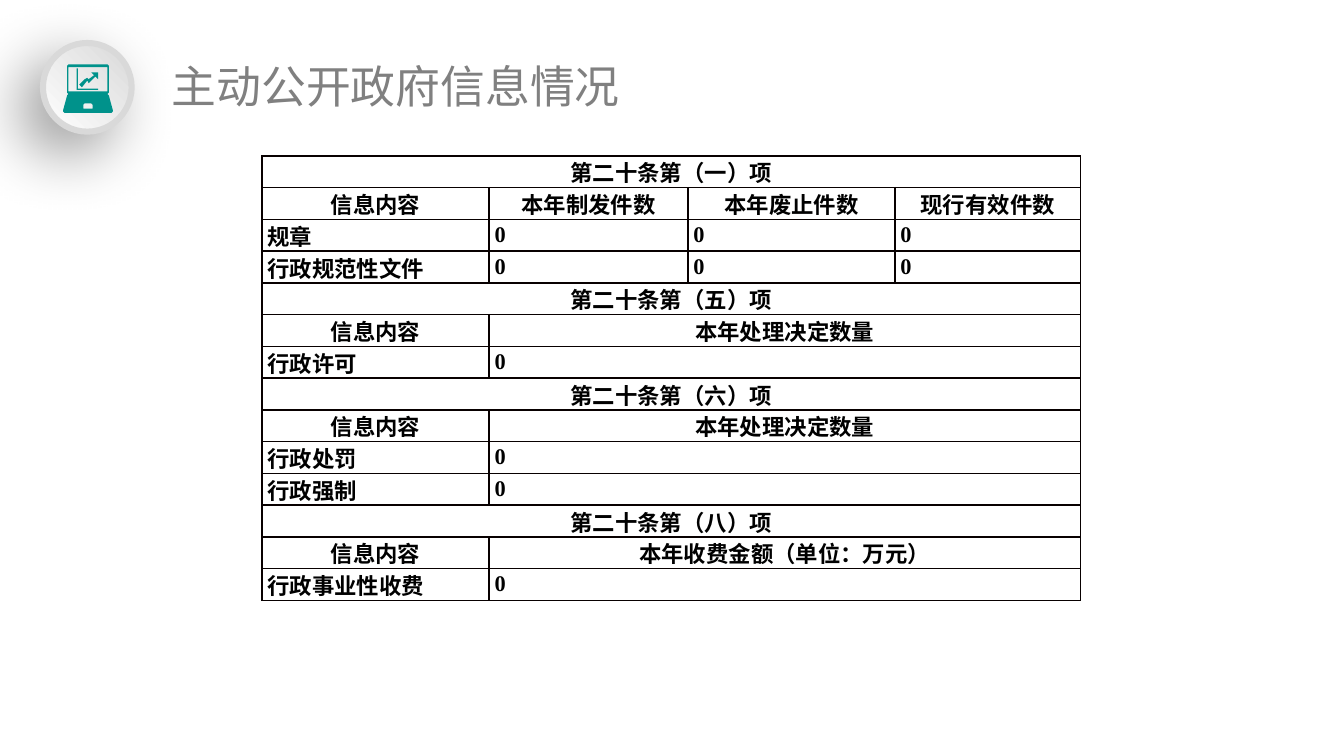
from lxml import etree
from pptx import Presentation
from pptx.dml.color import RGBColor
from pptx.enum import shapes, text
from pptx.oxml import ns
from pptx.util import Inches, Pt

WHITE = RGBColor(0xFF, 0xFF, 0xFF)
SILVER = RGBColor(0xD9, 0xD9, 0xD9)
GREY = RGBColor(0x80, 0x80, 0x80)
TEAL = RGBColor(0x00, 0x92, 0x8B)
BLACK = RGBColor(0, 0, 0)
BORDER = RGBColor(0x08, 0, 0)

COLUMNS = [1.69, 1.48, 1.54, 1.38]
TABLE_HEIGHT = 3.31
# One entry per section: title, column headings, data row labels
SECTIONS = [
    ("第二十条第（一）项", ["本年制发件数", "本年废止件数", "现行有效件数"],
     ["规章", "行政规范性文件"]),
    ("第二十条第（五）项", ["本年处理决定数量"], ["行政许可"]),
    ("第二十条第（六）项", ["本年处理决定数量"], ["行政处罚", "行政强制"]),
    ("第二十条第（八）项", ["本年收费金额（单位：万元）"], ["行政事业性收费"]),
]

# Laptop outline, then its cut-outs
LAPTOP = [
    [(0.51, 0.48), (0.8, 0.48), (0.81, 0.49), (0.81, 0.69), (0.8, 0.7),
     (0.81, 0.71), (0.84, 0.82), (0.84, 0.83), (0.83, 0.84), (0.48, 0.84),
     (0.47, 0.83), (0.47, 0.82), (0.5, 0.71), (0.51, 0.7), (0.5, 0.69),
     (0.5, 0.49)],
    [(0.51, 0.5), (0.51, 0.68), (0.8, 0.68), (0.8, 0.5)],
    [(0.63, 0.77), (0.62, 0.78), (0.62, 0.81), (0.69, 0.81), (0.69, 0.78),
     (0.68, 0.77)],
    [(0.73, 0.54), (0.73, 0.59), (0.71, 0.57), (0.66, 0.62), (0.65, 0.6),
     (0.61, 0.65), (0.59, 0.63), (0.63, 0.59), (0.65, 0.58), (0.66, 0.59),
     (0.7, 0.56), (0.68, 0.54)],
    [(0.57, 0.51), (0.57, 0.67), (0.73, 0.67), (0.73, 0.66),
     (0.58, 0.66), (0.58, 0.51)],
]


def set_all(target, values):
    for name, value in values.items():
        setattr(target, name, value)


def add_child(parent, tag, **attributes):
    return etree.SubElement(parent, ns.qn(tag), attributes)


def add_title(page, words):
    box = page.shapes.add_textbox(Inches(1.18), Inches(0.39),
                                  Inches(4.64), Inches(0.5))
    set_all(box.text_frame, {"word_wrap": True,
                             "auto_size": text.MSO_AUTO_SIZE.SHAPE_TO_FIT_TEXT})
    span = box.text_frame.paragraphs[0].add_run()
    span.text = words
    set_all(span.font, {"size": Pt(24), "name": "Arial"})
    span.font.color.rgb = GREY


def add_badge(page):
    badge = page.shapes.add_shape(shapes.MSO_SHAPE.OVAL, Inches(0.32),
                                  Inches(0.32), Inches(0.66), Inches(0.66))
    badge.fill.gradient()
    badge.fill.gradient_angle = 45
    for stop, colour, position in zip(badge.fill.gradient_stops,
                                      (WHITE, SILVER), (0, 1)):
        stop.color.rgb = colour
        stop.position = position
    badge.line.color.rgb = SILVER
    badge.line.width = Pt(3.25)

    # Soft shadow towards the lower left
    badge.shadow.inherit = False
    effects = badge._element.spPr.find(ns.qn("a:effectLst"))
    shadow = add_child(effects, "a:outerShdw", blurRad=str(Pt(35)),
                       dist=str(Pt(15)), dir=str(135 * 60000),
                       algn="ctr", rotWithShape="0")
    colour = add_child(shadow, "a:srgbClr", val=str(BLACK))
    add_child(colour, "a:alpha", val="40000")


def add_laptop(page):
    scale = Inches(1) / 1000
    builder = None
    for outline in LAPTOP:
        start, *rest = [(x * 1000, y * 1000) for x, y in outline]
        if builder is None:
            builder = page.shapes.build_freeform(*start, scale=scale)
        else:
            builder.move_to(*start)
        builder.add_line_segments(rest, close=True)
    laptop = builder.convert_to_shape()
    laptop.shadow.inherit = False
    laptop.fill.solid()
    laptop.fill.fore_color.rgb = TEAL
    laptop.line.fill.background()


def add_borders(cell):
    properties = cell._tc.get_or_add_tcPr()
    for side in ("a:lnL", "a:lnR", "a:lnT", "a:lnB"):
        line = add_child(properties, side, w=str(Pt(1)))
        add_child(add_child(line, "a:solidFill"), "a:srgbClr", val=str(BORDER))


def write_cell(cell, words, centred):
    set_all(cell, {"vertical_anchor": text.MSO_ANCHOR.MIDDLE,
                   "margin_left": Inches(0.04), "margin_right": Inches(0.04),
                   "margin_top": 0, "margin_bottom": 0})
    para = cell.text_frame.paragraphs[0]
    para.alignment = text.PP_ALIGN.CENTER if centred else text.PP_ALIGN.LEFT
    span = para.add_run()
    span.text = words
    set_all(span.font, {"size": Pt(12), "name": "Times New Roman", "bold": True})
    span.font.color.rgb = BLACK


def table_rows():
    """Yield the words of each row and whether they are centred."""
    for title, headings, labels in SECTIONS:
        yield [title], True
        yield ["信息内容", *headings], True
        for label in labels:
            yield [label] + ["0"] * len(headings), False


def add_disclosure_table(page):
    rows = list(table_rows())
    table = page.shapes.add_table(len(rows), len(COLUMNS), Inches(1.95),
                                  Inches(1.16), Inches(sum(COLUMNS)),
                                  Inches(TABLE_HEIGHT)).table
    set_all(table, {"first_row": False, "horz_banding": False})
    for column, width in zip(table.columns, COLUMNS):
        column.width = Inches(width)
    for row in table.rows:
        row.height = Inches(TABLE_HEIGHT / len(rows))
    for cell in table.iter_cells():
        add_borders(cell)
        cell.fill.solid()
        cell.fill.fore_color.rgb = WHITE

    # The last cell of a short row spans the remaining columns
    last = len(COLUMNS) - 1
    for r, (row_words, centred) in enumerate(rows):
        if len(row_words) <= last:
            table.cell(r, len(row_words) - 1).merge(table.cell(r, last))
        for c, words in enumerate(row_words):
            write_cell(table.cell(r, c), words, centred)


def main():
    deck = Presentation()
    # Widescreen, 16:9
    set_all(deck, {"slide_width": Inches(10),
                   "slide_height": Inches(10) * 9 // 16})
    page = deck.slides.add_slide(deck.slide_layouts[6])
    add_title(page, "主动公开政府信息情况")
    add_badge(page)
    add_laptop(page)
    add_disclosure_table(page)
    deck.save("out.pptx")


if __name__ == "__main__":
    main()
